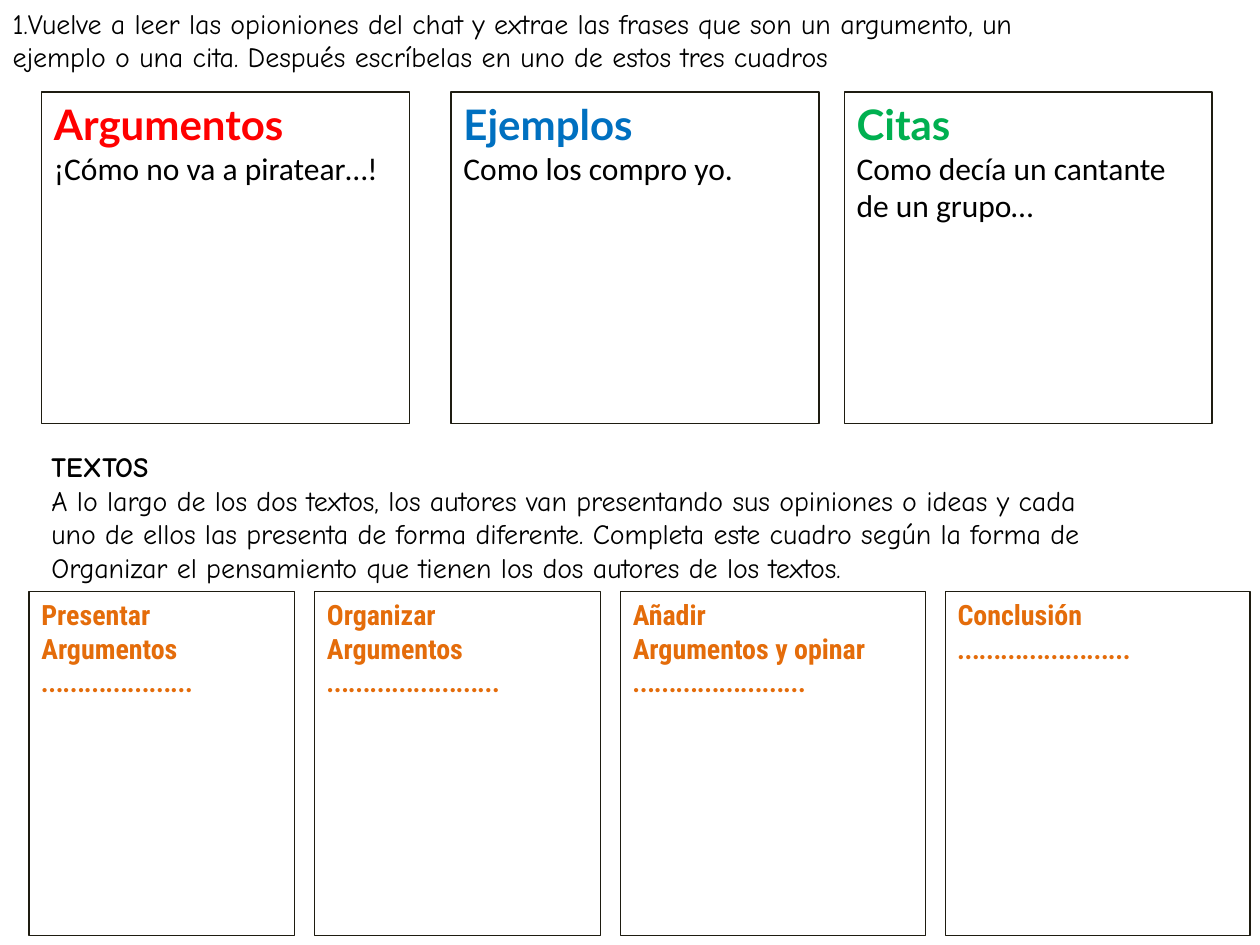
from pptx import Presentation
from pptx.dml.color import RGBColor
from pptx.enum.shapes import MSO_SHAPE as Shape
from pptx.enum.text import MSO_ANCHOR as Anchor, MSO_AUTO_SIZE as AutoSize, PP_ALIGN as Align
from pptx.util import Inches, Pt

COLORS = {
    "ink": "000000",
    "border": "1E1C11",
    "red": "FF0000",
    "blue": "0070C0",
    "green": "00B050",
    "orange": "E46C0A",
}
COLUMNS, ROWS = 100, 75


class Worksheet:
    prose_font = "Comic Neue"
    heading_font = "Lato"
    answer_font = "Calibri"
    label_font = "Roboto Condensed"

    def __init__(self, deck):
        self.deck = deck
        self.page = deck.slides.add_slide(deck.slide_layouts[5])

    def area(self, left, top, width, height):
        column = self.deck.slide_width / COLUMNS
        row = self.deck.slide_height / ROWS
        return (round(left * column), round(top * row),
                round(width * column), round(height * row))

    def fill_text(self, box, lines):
        frame = box.text_frame
        frame.word_wrap = True
        frame.auto_size = AutoSize.NONE
        frame.vertical_anchor = Anchor.TOP
        for index, (text, font, size, color, bold) in enumerate(lines):
            para = frame.add_paragraph() if index else frame.paragraphs[0]
            para.alignment = Align.LEFT
            span = para.add_run()
            span.text = text
            span.font.name = font
            span.font.size = Pt(size)
            span.font.bold = bold
            span.font.color.rgb = RGBColor.from_string(COLORS[color])

    def prose(self, text, bold=False):
        return text, self.prose_font, 16, "ink", bold

    def title(self, area, lines):
        box = self.page.shapes.title
        box.left, box.top, box.width, box.height = self.area(*area)
        self.fill_text(box, [self.prose(line) for line in lines])

    def text(self, area, heading, lines):
        box = self.page.shapes.add_textbox(*self.area(*area))
        self.fill_text(box, [self.prose(heading, True)] + [self.prose(line) for line in lines])

    def frame(self, area, lines):
        box = self.page.shapes.add_shape(Shape.RECTANGLE, *self.area(*area))
        box.shadow.inherit = False
        box.fill.background()
        box.line.color.rgb = RGBColor.from_string(COLORS["border"])
        box.line.width = Pt(0.75)
        self.fill_text(box, lines)

    def example_box(self, area, heading, color, answer):
        self.frame(area, [(heading, self.heading_font, 24, color, True),
                          (answer, self.answer_font, 18, "ink", False)])

    def outline_box(self, area, labels, dots):
        lines = [(label, self.label_font, 16, "orange", True) for label in labels]
        self.frame(area, lines + [(dots, self.heading_font, 16, "orange", True)])


def main():
    deck = Presentation()
    deck.slide_width, deck.slide_height = Inches(10), Inches(7.5)
    sheet = Worksheet(deck)

    sheet.title((0, 0, 88.3, 6.4), [
        "1.Vuelve a leer las opioniones del chat y extrae las frases que son un argumento, un",
        "ejemplo o una cita. Después escríbelas en uno de estos tres cuadros",
    ])

    examples = [
        (3.3, "Argumentos", "red", "¡Cómo no va a piratear…!"),
        (35.8, "Ejemplos", "blue", "Como los compro yo."),
        (67, "Citas", "green", "Como decía un cantante de un grupo…"),
    ]
    for left, heading, color, answer in examples:
        sheet.example_box((left, 7.3, 29.2, 26.3), heading, color, answer)

    sheet.text((3.1, 35.2, 92, 11.8), "TEXTOS", [
        "A lo largo de los dos textos, los autores van presentando sus opiniones o ideas y cada",
        "uno de ellos las presenta de forma diferente. Completa este cuadro según la forma de",
        "Organizar el pensamiento que tienen los dos autores de los textos.",
    ])

    outlines = [
        (21.1, ["Presentar", "Argumentos"], "…………………"),
        (22.7, ["Organizar", "Argumentos"], "……………………"),
        (24.2, ["Añadir", "Argumentos y opinar"], "……………………"),
        (24.2, ["Conclusión"], "……………………"),
    ]
    left, gap = 2.3, 1.57
    for width, labels, dots in outlines:
        sheet.outline_box((left, 46.95, width, 27.3), labels, dots)
        left += width + gap

    deck.save("out.pptx")


if __name__ == "__main__":
    main()
